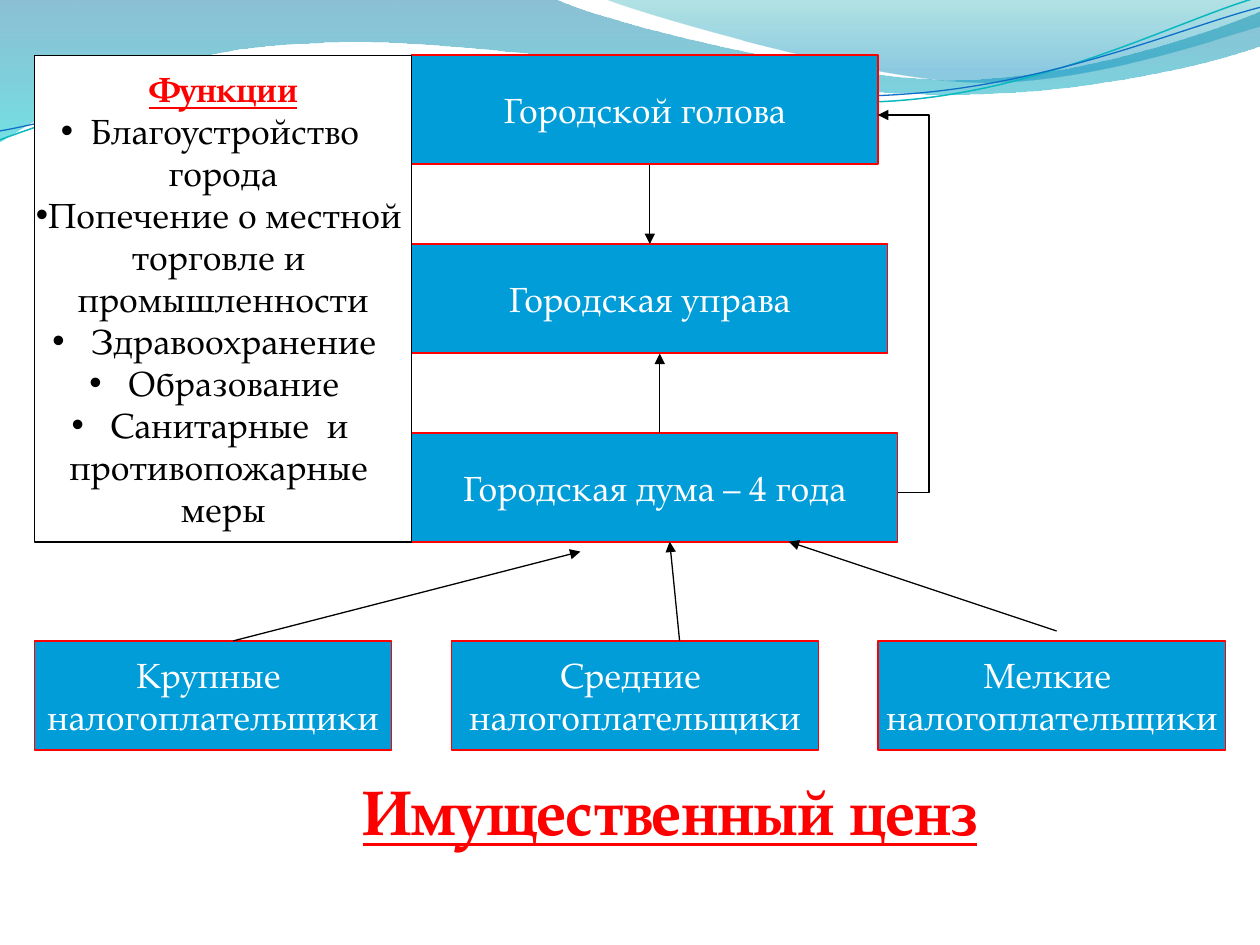
import pptx
import pptx.dml.color
import pptx.enum.shapes
import pptx.enum.text
import pptx.oxml.ns
import pptx.util
from lxml import etree

Cm, Pt = pptx.util.Cm, pptx.util.Pt
qn = pptx.oxml.ns.qn
FONT = "TeX Gyre Pagella"
TOP = 0  # connection site


def color(hex_string):
    return pptx.dml.color.RGBColor.from_string(hex_string)


def add_text(tf, text, first=False, size=20, fill="FFFFFF", bold=False,
             underline=False, bullet=False):
    """Write one centred paragraph into a text frame."""
    p = tf.paragraphs[0] if first else tf.add_paragraph()
    p.alignment = pptx.enum.text.PP_ALIGN.CENTER
    if bullet:
        pPr = p._p.get_or_add_pPr()
        etree.SubElement(pPr, qn("a:buFont"), typeface="Arial")
        etree.SubElement(pPr, qn("a:buChar"), char="•")
    r = p.add_run()
    r.text = text
    r.font.name, r.font.size = FONT, Pt(size)
    r.font.bold, r.font.underline = bold, underline
    r.font.color.rgb = color(fill)


class SlideBuilder:
    fill = "009DD9"
    border = "FF0000"
    line_width = Pt(0.75)

    def __init__(self, slide):
        self.s = slide

    def frame(self, sp, fill, border):
        sp.fill.solid()
        sp.fill.fore_color.rgb = color(fill)
        sp.line.color.rgb = color(border)
        sp.line.width = self.line_width
        tf = sp.text_frame
        tf.word_wrap = False
        tf.auto_size = pptx.enum.text.MSO_AUTO_SIZE.NONE
        tf.vertical_anchor = pptx.enum.text.MSO_ANCHOR.MIDDLE
        return tf

    def title(self, text, x, y, w, h):
        sp = self.s.shapes.title
        sp.left, sp.top, sp.width, sp.height = Cm(x), Cm(y), Cm(w), Cm(h)
        tf = self.frame(sp, "FFFFFF", "FFFFFF")
        add_text(tf, text, first=True, size=36, fill="FF0000", bold=True, underline=True)

    def box(self, x, y, w, h, lines, fill=None, border=None):
        """Rectangle; lines holds (text, format) pairs."""
        sp = self.s.shapes.add_shape(pptx.enum.shapes.MSO_SHAPE.RECTANGLE,
                                     Cm(x), Cm(y), Cm(w), Cm(h))
        sp.shadow.inherit = False
        tf = self.frame(sp, fill or self.fill, border or self.border)
        for i, (text, style) in enumerate(lines):
            add_text(tf, text, first=i == 0, **style)
        return sp

    def outline(self, start, segments, closed):
        """Freeform of lines (x, y) and cubic curves (x1, y1, x2, y2, x, y)."""
        points = [(Cm(x), Cm(y)) for seg in segments
                  for x, y in zip(seg[::2], seg[1::2])]
        fb = self.s.shapes.build_freeform(Cm(start[0]), Cm(start[1]))
        fb.add_line_segments(points, close=closed)
        sp = fb.convert_to_shape()
        sp.shadow.inherit = False
        # Join the three points of each curve into one Bezier segment
        steps = iter(list(sp._element.spPr.iter(qn("a:lnTo"))))
        for seg in segments:
            group = [next(steps) for _ in range(len(seg) // 2)]
            if len(group) == 3:
                curve = etree.Element(qn("a:cubicBezTo"))
                group[0].addprevious(curve)
                for step in group:
                    curve.append(step[0])
                    step.getparent().remove(step)
        return sp

    def wave(self, start, segments, stops):
        """Filled wave; stops holds (position, colour, opacity in percent)."""
        sp = self.outline(start, segments, True)
        sp.line.fill.background()
        sp.fill.gradient()
        sp.fill.gradient_angle = 270
        for stop, (position, hex_string, _) in zip(sp.fill.gradient_stops, stops):
            stop.position = position
            stop.color.rgb = color(hex_string)
        for clr, (_, _, opacity) in zip(sp._element.spPr.iter(qn("a:srgbClr")), stops):
            etree.SubElement(clr, qn("a:alpha"), val=str(opacity * 1000))

    def wave_line(self, start, segments, hex_string, width):
        sp = self.outline(start, segments, False)
        sp.fill.background()
        sp.line.color.rgb = color(hex_string)
        sp.line.width = Pt(width)

    def arrow(self, x1, y1, x2, y2, bend=None):
        """Arrow; bend places an elbow as a share of the horizontal run."""
        kinds = pptx.enum.shapes.MSO_CONNECTOR
        kind = kinds.STRAIGHT if bend is None else kinds.ELBOW
        cn = self.s.shapes.add_connector(kind, Cm(x1), Cm(y1), Cm(x2), Cm(y2))
        cn.line.color.rgb = color("000000")
        cn.line.width = self.line_width
        spPr = cn._element.spPr
        etree.SubElement(spPr.find(qn("a:ln")), qn("a:tailEnd"), type="triangle")
        etree.SubElement(spPr, qn("a:effectLst"))
        if bend is not None:
            guides = spPr.find(qn("a:prstGeom")).find(qn("a:avLst"))
            etree.SubElement(guides, qn("a:gd"), name="adj1",
                             fmla=f"val {round(bend * 100000)}")
        return cn


def main():
    prs = pptx.Presentation()
    prs.slide_width, prs.slide_height = Cm(25.4), Cm(19.05)
    b = SlideBuilder(prs.slides.add_slide(prs.slide_layouts[5]))

    # Wave decoration
    b.wave((0, 0), [
        (11.18, -0.03), (12.09, 0.43, 16.87, 1.6, 19.25, 1.6),
        (21.67, 1.6, 24.33, 0.66, 25.4, 0.23), (25.43, 0.91),
        (24.97, 1.12, 22.1, 1.93, 18.95, 1.9), (15.8, 1.9, 9.7, 0.71, 6.53, 0.86),
        (3.28, 0.91, 1.17, 2.11, -0.03, 2.87),
    ], [(0, "0074A1", 45), (1, "00C6CF", 55)])
    b.wave((12.17, -0.03), [
        (12.93, 0.28, 17.32, 1.57, 19.53, 1.65),
        (21.74, 1.75, 24.41, 0.81, 25.4, 0.53), (25.4, 0),
    ], [(0, "00A1A9", 30), (0.8, "008BBF", 45)])
    b.wave_line((0, 2.82), [
        (1.22, 2.36, 4.01, 1.45, 7.04, 1.32), (10.03, 1.19, 15.06, 2.26, 18.11, 2.03),
        (21.16, 1.8, 23.83, 0.38, 25.35, -0.05)], "0AB8BF", 0.85)
    b.wave_line((0, 2.64), [
        (1.19, 2.44, 4.17, 1.55, 7.19, 1.42), (10.24, 1.3, 15.16, 2.13, 18.21, 1.9),
        (21.23, 1.7, 23.9, 0.53, 25.4, 0.15)], "0F6FC6", 0.75)

    # City authorities, from the head down
    box_h = 2.2
    authorities = [
        b.box(8.3, 1.11 + 3.81 * i, 9.4 + 0.2 * i, box_h, [(name, {})])
        for i, name in enumerate(
            ["Городской голова", "Городская управа", "Городская дума – 4 года"])]

    # Taxpayer groups
    for x, w, group in [(0.69, 7.21, "Крупные "), (9.1, 7.4, "Средние "),
                        (17.7, 7.01, "Мелкие ")]:
        b.box(x, 12.92, w, box_h, [(group, {}), ("налогоплательщики", {})])

    # Arrows
    b.arrow(4.7, 12.92, 11.7, 11.12)
    b.arrow(13.7, 12.92, 13.5, 10.92)
    b.arrow(21.3, 12.72, 15.9, 10.92)
    b.arrow(13.3, 8.73, 13.3, 7.13)
    b.arrow(18.1, 9.93, 17.7, 2.32, bend=-1.57)

    b.title("Имущественный ценз", 4.9, 15.53, 17.2, 1.6)
    b.arrow(13.1, 3.32, 13.1, 4.92).end_connect(authorities[1], TOP)

    # Functions of the city government
    item, rest = {"fill": "000000", "bullet": True}, {"fill": "000000"}
    b.box(0.7, 1.12, 7.6, 9.81, [
        ("Функции", {"fill": "FF0000", "bold": True, "underline": True}),
        ("Благоустройство ", item), ("города", rest),
        ("Попечение о местной ", item), ("торговле и ", rest), ("промышленности", rest),
        (" Здравоохранение", item), (" Образование", item),
        (" Санитарные  и ", item), ("противопожарные ", rest), ("меры", rest),
    ], fill="FFFFFF", border="000000")

    prs.save("out.pptx")


if __name__ == "__main__":
    main()
